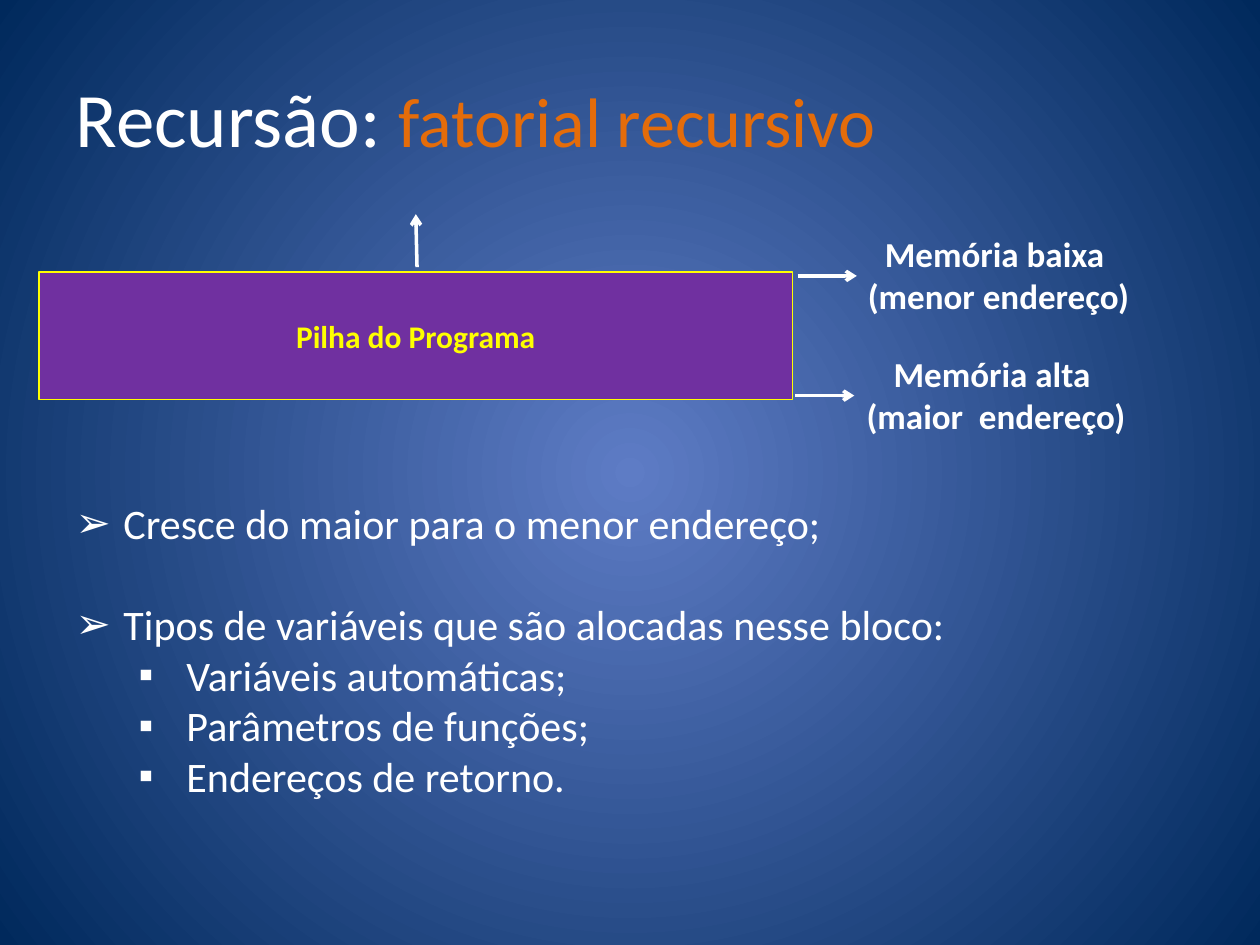
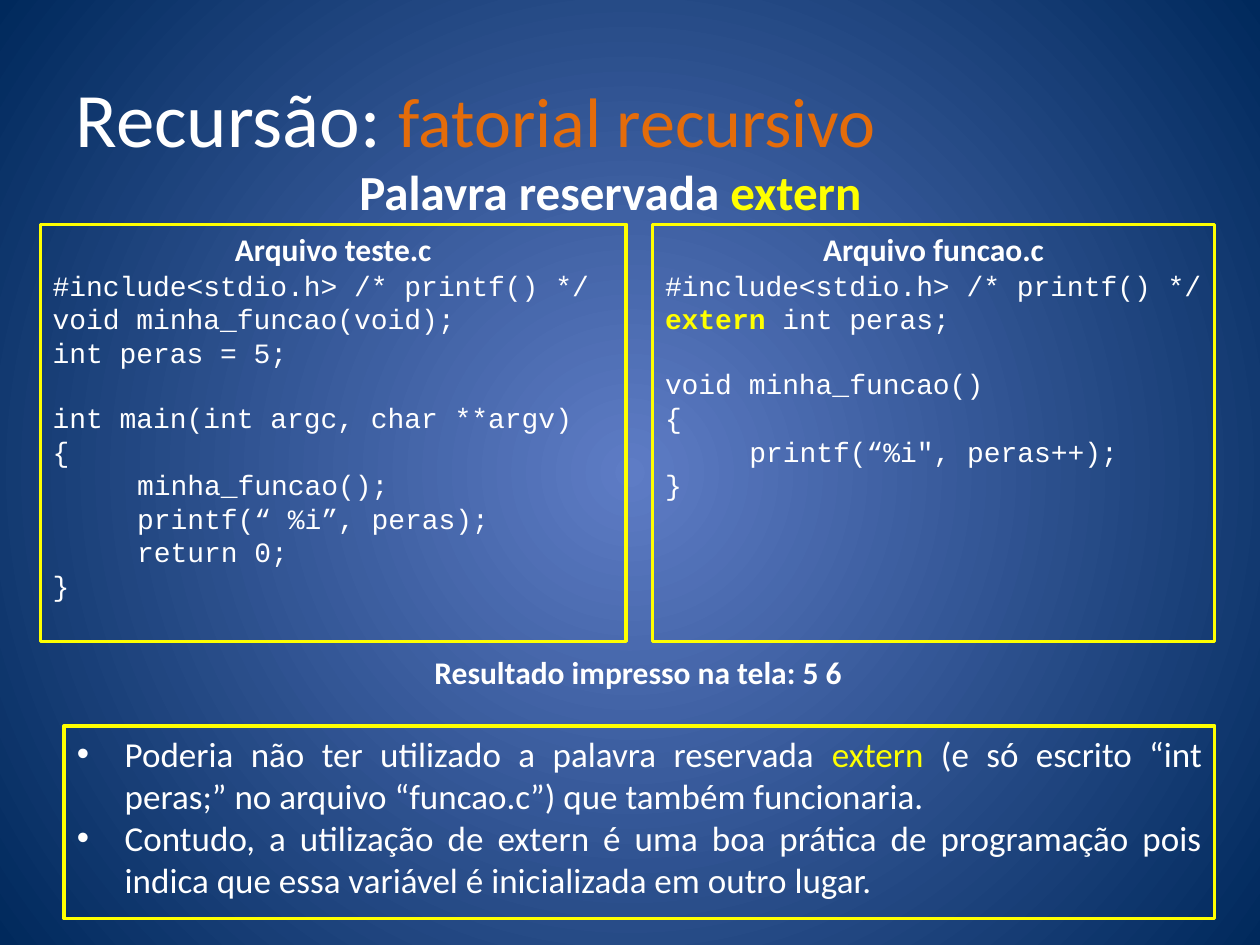
import lxml.etree
import pptx
import pptx.dml.color
import pptx.enum.shapes
import pptx.enum.text
import pptx.oxml.ns
import pptx.util

SCALE = 9144
WHITE = "FFFFFF"
YELLOW = "FFFF00"
ORANGE = "E46C0A"
PURPLE = "7030A0"
GLOW = "5E7CC5"
NAVY = "00295C"
SANS = "Calibri"
MONO = "Courier New"
ALIGN = pptx.enum.text.PP_ALIGN
ANCHOR = pptx.enum.text.MSO_ANCHOR
RECT = pptx.enum.shapes.MSO_SHAPE.RECTANGLE
STRAIGHT = pptx.enum.shapes.MSO_CONNECTOR.STRAIGHT


def px(*sizes):
    return [pptx.util.Emu(size * SCALE) for size in sizes]


def paint(code):
    return pptx.dml.color.RGBColor.from_string(code)


def child(node, tag, **attrs):
    return lxml.etree.SubElement(node, pptx.oxml.ns.qn(tag), attrs)


class Deck:
    def __init__(self):
        self.show = pptx.Presentation()
        self.show.slide_width, self.show.slide_height = px(1000, 750)
        self.slide = None
        self.backdrop()

    def backdrop(self):
        master = self.show.slide_master
        fill = master.background.fill
        fill.gradient()
        for stop, code, place in zip(fill.gradient_stops, (GLOW, NAVY), (0, 1)):
            stop.color.rgb = paint(code)
            stop.position = place
        grad = next(master.element.iter(pptx.oxml.ns.qn("a:gradFill")))
        grad.remove(grad.find(pptx.oxml.ns.qn("a:lin")))
        ring = child(grad, "a:path", path="circle")
        child(ring, "a:fillToRect", l="50000", t="50000", r="50000", b="50000")

    def place(self, shape, box):
        shape.left, shape.top, shape.width, shape.height = px(*box)

    def page(self, title):
        self.slide = self.show.slides.add_slide(self.show.slide_layouts[1])
        head = self.slide.shapes.title
        self.place(head, (50, 30, 900, 125))
        self.line(head.text_frame, title, 44, accent=ORANGE, small=40)

    def line(self, frame, text, size, color=WHITE, font=SANS, bold=False,
             align=ALIGN.LEFT, accent=YELLOW, small=None, strong=False,
             gap=0, left=0, hang=0, mark=None, level=0):
        para = frame.add_paragraph() if frame.text else frame.paragraphs[0]
        first, *rest = text.split("|")
        para.text = first
        for part in rest:
            para.add_run().text = part
        for place, run in enumerate(text.split("|")):
            if not run:
                continue
        for place, run in enumerate(para.runs, start=0 if first else 1):
            odd = place % 2 == 1
            run.font.name = font
            run.font.size = pptx.util.Pt(small if odd and small else size)
            run.font.bold = bold or (odd and strong)
            run.font.color.rgb = paint(accent if odd else color)
        para.alignment = align
        para.level = level
        para.space_before = pptx.util.Pt(gap)
        props = para._p.get_or_add_pPr()
        props.set("marL", str(left * SCALE))
        props.set("indent", str(-hang * SCALE))
        if mark:
            child(props, "a:buFont", typeface="Arial")
            child(props, "a:buChar", char=mark)

    def body(self, box):
        shape = self.slide.placeholders[1]
        self.place(shape, box)
        shape.text_frame.auto_size = pptx.enum.text.MSO_AUTO_SIZE.NONE
        return shape

    def edge(self, shape, width, color=YELLOW):
        shape.line.color.rgb = paint(color)
        shape.line.width = pptx.util.Pt(width)

    def panel(self, box, width=2, fill=None, anchor=ANCHOR.TOP):
        shape = self.slide.shapes.add_shape(RECT, *px(*box))
        shape.shadow.inherit = False
        if fill:
            shape.fill.solid()
            shape.fill.fore_color.rgb = paint(fill)
        else:
            shape.fill.background()
        self.edge(shape, width)
        shape.text_frame.vertical_anchor = anchor
        return shape.text_frame

    def label(self, box, *lines, size=20, align=ALIGN.CENTER):
        frame = self.slide.shapes.add_textbox(*px(*box)).text_frame
        frame.word_wrap = True
        for text in lines:
            self.line(frame, text, size, bold=True, align=align)

    def arrow(self, *ends):
        link = self.slide.shapes.add_connector(STRAIGHT, *px(*ends))
        self.edge(link, 2, WHITE)
        props = link.element.spPr
        child(props.find(pptx.oxml.ns.qn("a:ln")), "a:tailEnd", type="arrow")
        child(props, "a:effectLst")

    def code(self, box, name, blocks):
        frame = self.panel(box)
        self.line(frame, name, 18, bold=True, align=ALIGN.CENTER)
        for order, block in enumerate(blocks):
            for row, text in enumerate(block):
                self.line(frame, text.lstrip("\t"), 16, font=MONO, strong=True,
                          gap=18 if order and not row else 0,
                          left=67 * text.count("\t"))


def stack(deck):
    deck.page("Recursão: |fatorial recursivo")
    frame = deck.body((50, 390, 843, 300)).text_frame
    main = dict(left=38, hang=38, mark="➢")
    deck.line(frame, "Cresce do maior para o menor endereço;", 24,
              align=ALIGN.JUSTIFY, **main)
    deck.line(frame, "Tipos de variáveis que são alocadas nesse bloco:", 24,
              gap=29, **main)
    for text in ("Variáveis automáticas;", "Parâmetros de funções;",
                 "Endereços de retorno."):
        deck.line(frame, text, 24, left=88, hang=38, mark="▪", level=1)

    frame = deck.panel((31, 216, 598, 101), 0.75, PURPLE, ANCHOR.MIDDLE)
    deck.line(frame, "Pilha do Programa", 18, YELLOW, bold=True,
              align=ALIGN.CENTER)
    deck.arrow(331, 212, 330, 170)
    for left, top, name, note in (
            (633, 219, "Memória baixa ", "(menor endereço)"),
            (631, 314, "Memória alta ", "(maior  endereço)")):
        deck.arrow(left, top, left + 47, top)
        deck.label((left + 22, top - 39, 275, 77), name, note)


def extern(deck):
    deck.page("Recursão: |fatorial recursivo")
    deck.code((32, 178, 465, 331), "Arquivo teste.c", (
        ("#include<stdio.h> /* printf() */",
         "void minha_funcao(void);",
         "int peras = 5;"),
        ("int main(int argc, char **argv)",
         "{",
         "\tminha_funcao();",
         "\tprintf(“ %i”, peras);",
         "\treturn 0;",
         "}")))
    deck.code((518, 178, 446, 331), "Arquivo funcao.c", (
        ("#include<stdio.h> /* printf() */",
         "|extern |int peras;"),
        ("void minha_funcao()",
         "{",
         "\tprintf(“%i\", peras++);",
         "}")))
    deck.label((193, 123, 583, 57), "Palavra reservada |extern", size=28)
    deck.label((335, 513, 346, 51), "Resultado impresso na tela: 5 6",
               size=18, align=ALIGN.LEFT)
    notes = deck.body((51, 576, 913, 153))
    deck.edge(notes, 2)
    for text in (
            "Poderia não ter utilizado a palavra reservada |extern |(e só "
            "escrito “int peras;” no arquivo “funcao.c”) que também "
            "funcionaria.",
            "Contudo, a utilização de extern é uma boa prática de programação "
            "pois indica que essa variável é inicializada em outro lugar."):
        deck.line(notes.text_frame, text, 20, align=ALIGN.JUSTIFY,
                  left=38, hang=38, mark="•")


def main():
    deck = Deck()
    stack(deck)
    extern(deck)
    deck.show.save("out.pptx")


if __name__ == "__main__":
    main()
